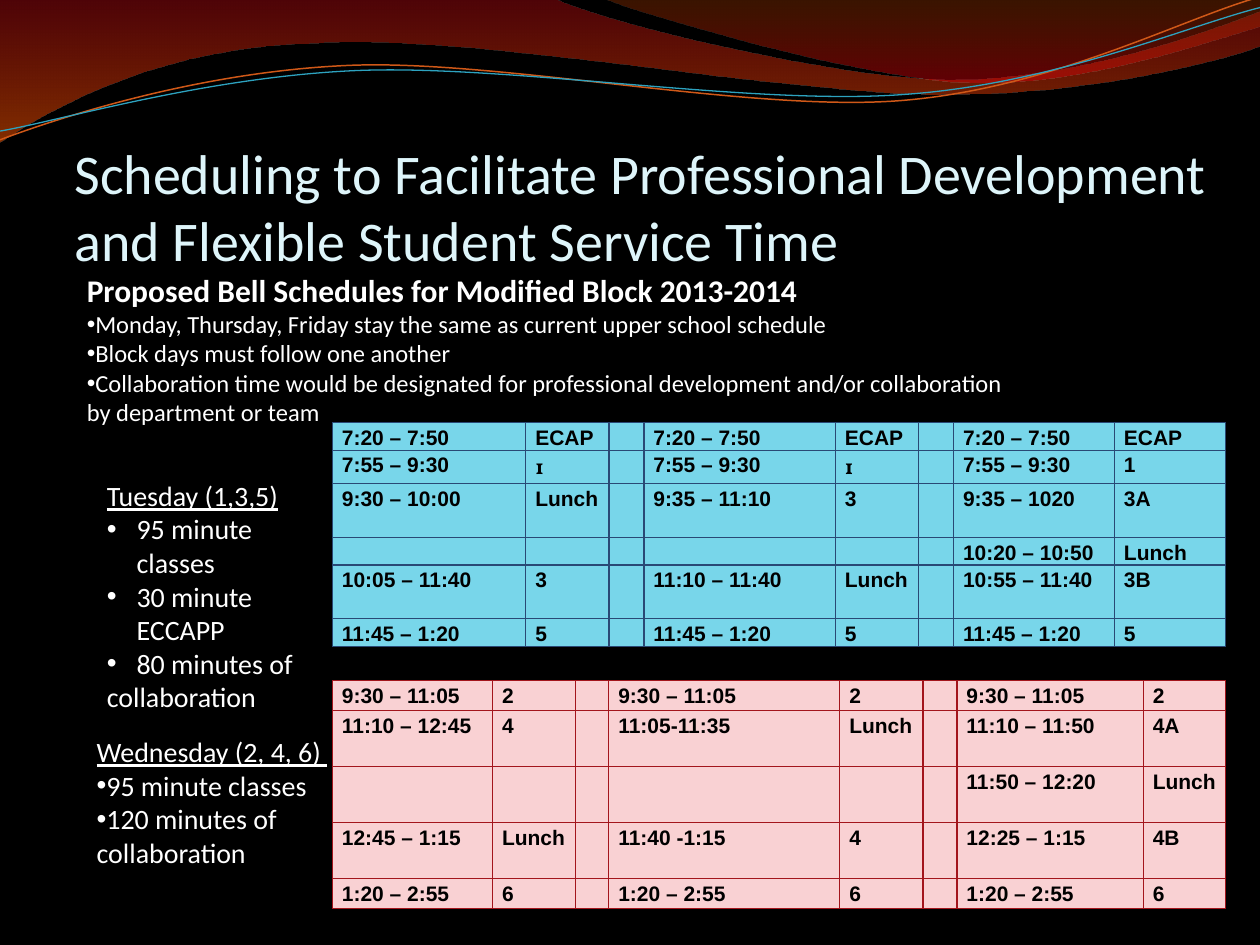
"""Build the slide of proposed modified block bell schedules."""
from lxml.etree import SubElement
from pptx import Presentation
from pptx.dml.color import RGBColor
from pptx.enum.text import MSO_ANCHOR as Anchor, PP_ALIGN as Align
from pptx.oxml.ns import qn
from pptx.util import Pt

COLORS = {
    "background": "000000", "title": "DEF5FA", "text": "FFFFFF", "cell_text": "000000",
    "red": "AF0911", "orange": "EE5300", "brown": "C24400", "scarlet": "DC000B",
    "orange_line": "CF5818", "teal_line": "2DA2BF",
    "tuesday": "78D6EA", "tuesday_border": "294975",
    "wednesday": "F9D1D3", "wednesday_border": "A3151C",
}

TITLE = "Scheduling to Facilitate Professional Development and Flexible Student Service Time"

BANDS = [
    ([("red", 45), ("orange", 55)],
     [(0, 0), (316.8, -0.7), (342.7, 12.2, 478.1, 45.4, 545.8, 45.4),
      (614.2, 45.4, 689.8, 18.7, 720, 6.5), (720.7, 25.9),
      (707.8, 31.7, 626.4, 54.7, 537.1, 54), (447.8, 54, 275, 20.2, 185, 24.5),
      (92.9, 25.9, 33.1, 59.8, -0.7, 81.4), (0, 0)]),
    ([("brown", 30), ("scarlet", 45)],
     [(344.9, -0.7), (366.5, 7.9, 491, 44.6, 553.7, 46.8),
      (616.3, 49.7, 691.9, 23, 720, 15.1), (720, 0), (344.9, -0.7)]),
]
WAVES = [
    ("orange_line", 0.85,
     [(0, 79.9), (34.6, 67, 113.8, 41, 199.4, 37.4),
      (284.4, 33.8, 427, 64.1, 513.4, 57.6), (599.8, 51.1, 675.4, 10.8, 718.6, -1.4)]),
    ("teal_line", 0.75,
     [(0, 74.9), (33.8, 69.1, 118.1, 43.9, 203.8, 40.3),
      (290.2, 36.7, 429.8, 60.5, 516.2, 54), (601.9, 48.2, 677.5, 15.1, 720, 4.3)]),
]

TABLES = [
    ("wednesday", (190, 389), [91.5, 47.5, 19, 132, 47.5, 19.5, 106.5, 47],
     [17.2, 32, 32, 32, 17.2],
     [("9:30 – 11:05", "2", "", "9:30 – 11:05", "2", "", "9:30 – 11:05", "2"),
      ("11:10 – 12:45", "4", "", "11:05-11:35", "Lunch", "", "11:10 – 11:50", "4A"),
      ("", "", "", "", "", "", "11:50 – 12:20", "Lunch"),
      ("12:45 – 1:15", "Lunch", "", "11:40 -1:15", "4", "", "12:25 – 1:15", "4B"),
      ("1:20 – 2:55", "6", "", "1:20 – 2:55", "6", "", "1:20 – 2:55", "6")]),
    ("tuesday", (190, 241.5), [110.5, 47.5, 20, 109.5, 47.5, 20, 92, 63.5],
     [15.8, 15.8, 30.6, 15.8, 30.6, 15.8],
     [("7:20 – 7:50", "ECAP", "", "7:20 – 7:50", "ECAP", "", "7:20 – 7:50", "ECAP"),
      ("7:55 – 9:30", "1", "", "7:55 – 9:30", "1", "", "7:55 – 9:30", "1"),
      ("9:30 – 10:00", "Lunch", "", "9:35 – 11:10", "3", "", "9:35 – 1020", "3A"),
      ("", "", "", "", "", "", "10:20 – 10:50", "Lunch"),
      ("10:05 – 11:40", "3", "", "11:10 – 11:40", "Lunch", "", "10:55 – 11:40", "3B"),
      ("11:45 – 1:20", "5", "", "11:45 – 1:20", "5", "", "11:45 – 1:20", "5")]),
]
VOLLKORN_CELLS = {("tuesday", 1, 1), ("tuesday", 1, 4)}

NOTES = [
    {"box": (48.2, 415.6, 175.7, 85), "anchor": Anchor.MIDDLE, "hang": 0, "size": 16,
     "heading": ("Wednesday (2, 4, 6) ", 16, False),
     "bullets": ["95 minute classes", "120 minutes of collaboration"], "tail": []},
    {"box": (42.5, 150.8, 541.4, 97.2), "anchor": Anchor.MIDDLE, "hang": 0, "size": 14,
     "heading": ("Proposed Bell Schedules for Modified Block 2013-2014", 18, True),
     "bullets": ["Monday, Thursday, Friday stay the same as current upper school schedule",
                 "Block days must follow one another",
                 "Collaboration time would be designated for professional development "
                 "and/or collaboration by department or team"], "tail": []},
    {"box": (54, 269.8, 141.8, 104.4), "anchor": Anchor.TOP, "hang": 17, "size": 16,
     "heading": ("Tuesday (1,3,5)", 16, False),
     "bullets": ["95 minute classes", "30 minute ECCAPP", "80 minutes of"],
     "tail": ["collaboration"]},
]


def rgb(name):
    return RGBColor.from_string(COLORS[name])


def style(p, size, color, font="Calibri", bold=False, underline=False):
    for r in p.runs:
        r.font.size, r.font.name, r.font.bold = Pt(size), font, bold
        r.font.underline = underline
        r.font.color.rgb = rgb(color)


def add_curve(s, steps, close):
    ends = [(Pt(step[-2]), Pt(step[-1])) for step in steps]
    builder = s.shapes.build_freeform(*ends[0])
    builder.add_line_segments(ends[1:], close=close)
    sp = builder.convert_to_shape()
    sp.shadow.inherit = False
    segments = list(sp.element.iter(qn("a:lnTo")))
    for segment, step in zip(segments, steps[1:]):
        if len(step) == 6:
            segment.tag = qn("a:cubicBezTo")
            segment.remove(segment[0])
            for x, y in zip(step[::2], step[1::2]):
                SubElement(segment, qn("a:pt"), x=str(Pt(x) - sp.left), y=str(Pt(y) - sp.top))
    return sp


def add_band(s, stops, steps):
    sp = add_curve(s, steps, True)
    sp.line.fill.background()
    sp.fill.gradient()
    sp.fill.gradient_angle = 270
    for stop, (color, _) in zip(sp.fill.gradient_stops, stops):
        stop.color.rgb = rgb(color)
    elements = sp.element.spPr.iter(qn("a:srgbClr"))
    for element, (_, opacity) in zip(elements, stops):
        SubElement(element, qn("a:alpha"), val=str(opacity * 1000))


def add_wave(s, color, width, steps):
    sp = add_curve(s, steps, False)
    sp.fill.background()
    sp.line.color.rgb = rgb(color)
    sp.line.width = Pt(width)


def format_cell(cell, text, day, font):
    cell.margin_left = cell.margin_right = Pt(5.4)
    cell.margin_top = cell.margin_bottom = 0
    p = cell.text_frame.paragraphs[0]
    p.text = text
    p.line_spacing = 1.15
    style(p, 12, "cell_text", font, bold=True)
    if not text:
        SubElement(p._p, qn("a:endParaRPr"), sz="1200")
    tcPr = cell._tc.get_or_add_tcPr()
    for side in ("lnL", "lnR", "lnT", "lnB"):
        ln = SubElement(tcPr, qn(f"a:{side}"), w=str(Pt(0.75)))
        fill = SubElement(ln, qn("a:solidFill"))
        SubElement(fill, qn("a:srgbClr"), val=COLORS[f"{day}_border"])
    cell.fill.solid()
    cell.fill.fore_color.rgb = rgb(day)


def add_schedule(s, day, corner, widths, heights, rows):
    left, top = corner
    table = s.shapes.add_table(len(rows), len(widths), Pt(left), Pt(top),
                               Pt(sum(widths)), Pt(sum(heights))).table
    table.first_row = table.horz_banding = False
    for column, width in zip(table.columns, widths):
        column.width = Pt(width)
    for i, (height, row) in enumerate(zip(heights, rows)):
        table.rows[i].height = Pt(height)
        for j, text in enumerate(row):
            font = "Vollkorn" if (day, i, j) in VOLLKORN_CELLS else "Arial"
            format_cell(table.cell(i, j), text, day, font)


def add_note(s, note):
    tf = s.shapes.add_textbox(*map(Pt, note["box"])).text_frame
    tf.word_wrap = True
    tf.vertical_anchor = note["anchor"]
    heading, size, bold = note["heading"]
    tf.text = "\n".join([heading, *note["bullets"], *note["tail"]])
    style(tf.paragraphs[0], size, "text", bold=bold, underline=not bold)
    for i, p in enumerate(tf.paragraphs[1:]):
        style(p, note["size"], "text")
        if i < len(note["bullets"]):
            pPr = p._p.get_or_add_pPr()
            pPr.set("marL", str(Pt(note["hang"])))
            pPr.set("indent", str(-Pt(note["hang"])))
            SubElement(pPr, qn("a:buFont"), typeface="Arial")
            SubElement(pPr, qn("a:buChar"), char="•")


def add_title(s):
    sp = s.shapes.title
    sp.left, sp.top, sp.width, sp.height = map(Pt, (42.5, 65.8, 653.8, 90))
    tf = sp.text_frame
    tf.text = TITLE
    tf.word_wrap = True
    tf.vertical_anchor = Anchor.BOTTOM
    tf.margin_left = tf.margin_right = tf.margin_bottom = 0
    tf.paragraphs[0].alignment = Align.LEFT
    style(tf.paragraphs[0], 32, "title")


def main():
    prs = Presentation()
    prs.slide_width, prs.slide_height = Pt(720), Pt(540)
    s = prs.slides.add_slide(prs.slide_layouts[5])
    s.background.fill.solid()
    s.background.fill.fore_color.rgb = rgb("background")
    for band in BANDS:
        add_band(s, *band)
    for wave in WAVES:
        add_wave(s, *wave)
    add_title(s)
    for schedule in TABLES:
        add_schedule(s, *schedule)
    for note in NOTES:
        add_note(s, note)
    prs.save("out.pptx")


if __name__ == "__main__":
    main()
